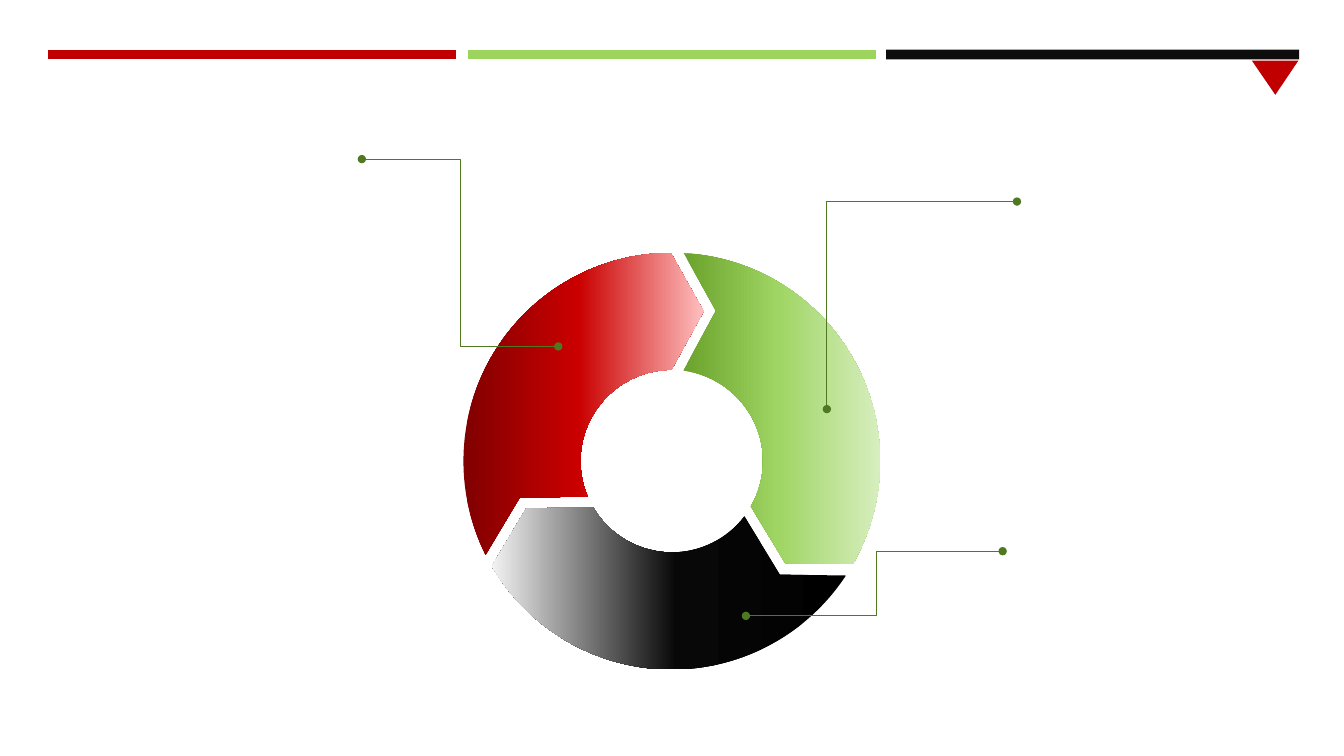
import math
from lxml import etree
from pptx import Presentation
from pptx.dml.color import RGBColor
from pptx.enum.shapes import MSO_CONNECTOR, MSO_SHAPE
from pptx.oxml import parse_xml
from pptx.oxml.ns import nsdecls, qn
from pptx.util import Cm, Pt

STRAIGHT = MSO_CONNECTOR.STRAIGHT
ELBOW = MSO_CONNECTOR.ELBOW
RECTANGLE = MSO_SHAPE.RECTANGLE

RED, GREEN, BLACK, DARK_GREEN = "C00000", "9CD45E", "0D0D0D", "4F7920"
SEGMENTS = [
    (("6AA22B", "9FD563", "D7EEBF"), 0),
    (("000000", "080808", "F2F2F2"), 180),
    (("810000", "CA0000", "FFBFBF"), 0),
]
CALLOUTS = [
    ((8.7, -6.54), (3.91, -1.31), "bentConnector2", None),
    ((8.34, 2.27), (1.87, 3.9), "bentConnector3", 49100),
    ((-7.81, -7.61), (-2.86, -2.89), "bentConnector3", 50000),
]


def rgb(value):
    return RGBColor.from_string(value)


def paint(shape, color):
    shape.shadow.inherit = False
    shape.fill.solid()
    shape.fill.fore_color.rgb = rgb(color)
    shape.line.fill.background()


def paint_gradient(shape, colors, angle):
    shape.shadow.inherit = False
    shape.line.fill.background()
    stops = "".join(
        f'<a:gs pos="{pos * 1000}"><a:srgbClr val="{color}"/></a:gs>'
        for pos, color in zip((0, 48, 100), colors))
    gradient = parse_xml(
        f'<a:gradFill rotWithShape="1" {nsdecls("a")}><a:gsLst>{stops}</a:gsLst>'
        f'<a:lin ang="{angle * 60000}" scaled="0"/></a:gradFill>')
    shape._element.spPr.find(qn("a:custGeom")).addnext(gradient)


def add_line(s, kind, start, end, color, width):
    c = s.shapes.add_connector(kind, *[Cm(v) for v in (*start, *end)])
    c.line.color.rgb = rgb(color)
    c.line.width = Pt(width)
    etree.SubElement(c._element.spPr, qn("a:effectLst"))
    return c


def add_outline(shapes, points):
    corners = [(Cm(x), Cm(y)) for x, y in points]
    builder = shapes.build_freeform(*corners[0])
    builder.add_line_segments(corners[1:], close=True)
    return builder.convert_to_shape()


def add_curved_outline(shapes, steps):
    shape = add_outline(shapes, [point for point, handles in steps])
    left, top = shape.left, shape.top
    sides = list(shape._element.iter(qn("a:lnTo")))
    for side, (point, handles) in zip(sides, steps[1:]):
        if handles:
            side.tag = qn("a:cubicBezTo")
            for i, (x, y) in enumerate(handles):
                pt = etree.Element(qn("a:pt"), x=str(Cm(x) - left), y=str(Cm(y) - top))
                side.insert(i, pt)
    return shape


def add_header(s, left, top, width):
    bar, pitch, middle = 10.28, 10.57, top + 0.12
    for i, color in enumerate((RED, GREEN)):
        x = left + i * pitch
        add_line(s, STRAIGHT, (x, middle), (x + bar, middle), color, 6.5)
    right, block_width = left + width, 10.41
    block = s.shapes.add_shape(RECTANGLE, Cm(right - block_width), Cm(top),
                               Cm(block_width), Cm(0.25))
    paint(block, BLACK)
    y = top + 0.28
    marker = add_outline(s.shapes, [(right - 1.19, y), (right - 0.6, y + 0.86),
                                    (right - 0.02, y)])
    paint(marker, RED)


def add_ring(s, left, top, size):
    outer = size / 2
    inner, tip, notch = outer * 0.438, outer * 0.735, outer * 0.752
    cx, cy = left + outer, top + outer

    def polar(radius, degrees):
        a = math.radians(degrees)
        return cx + radius * math.sin(a), cy - radius * math.cos(a)

    def arc(radius, start, end):
        low, high = min(start, end), max(start, end)
        quarters = [q for q in range(0, 450, 90) if low < q < high]
        stops = sorted([start, *quarters, end], reverse=start > end)
        steps = [(polar(radius, start), None)]
        for a, b in zip(stops, stops[1:]):
            reach = radius * 4 / 3 * math.tan(math.radians(b - a) / 4)
            (x1, y1), (x2, y2) = polar(radius, a), polar(radius, b)
            a, b = math.radians(a), math.radians(b)
            handles = [(x1 + reach * math.cos(a), y1 + reach * math.sin(a)),
                       (x2 - reach * math.cos(b), y2 - reach * math.sin(b))]
            steps.append(((x2, y2), handles))
        return steps

    group = s.shapes.add_group_shape()
    for i, (colors, angle) in enumerate(SEGMENTS):
        turn = 120 * i
        steps = (arc(outer, turn + 3.3, turn + 119.7)
                 + [(polar(tip, turn + 132), None)]
                 + arc(inner, turn + 119.8, turn + 7.3)
                 + [(polar(notch, turn + 16.4), None)])
        paint_gradient(add_curved_outline(group.shapes, steps), colors, angle)


def add_callouts(s, cx, cy):
    for start, end, geometry, bend in CALLOUTS:
        c = add_line(s, ELBOW, (cx + start[0], cy + start[1]),
                     (cx + end[0], cy + end[1]), DARK_GREEN, 0.75)
        preset = c._element.spPr.find(qn("a:prstGeom"))
        preset.set("prst", geometry)
        if bend:
            guides = preset.find(qn("a:avLst"))
            etree.SubElement(guides, qn("a:gd"), name="adj1", fmla=f"val {bend}")
        ln = c.line._get_or_add_ln()
        for name in ("a:headEnd", "a:tailEnd"):
            etree.SubElement(ln, qn(name), type="oval")


def main():
    prs = Presentation()
    prs.slide_width, prs.slide_height = Cm(33.87), Cm(19.05)
    s = prs.slides.add_slide(prs.slide_layouts[6])
    add_header(s, 1.22, 1.25, 31.52)
    add_ring(s, 11.68, 6.37, 10.5)
    add_callouts(s, 16.93, 11.62)
    prs.save("out.pptx")


if __name__ == "__main__":
    main()
